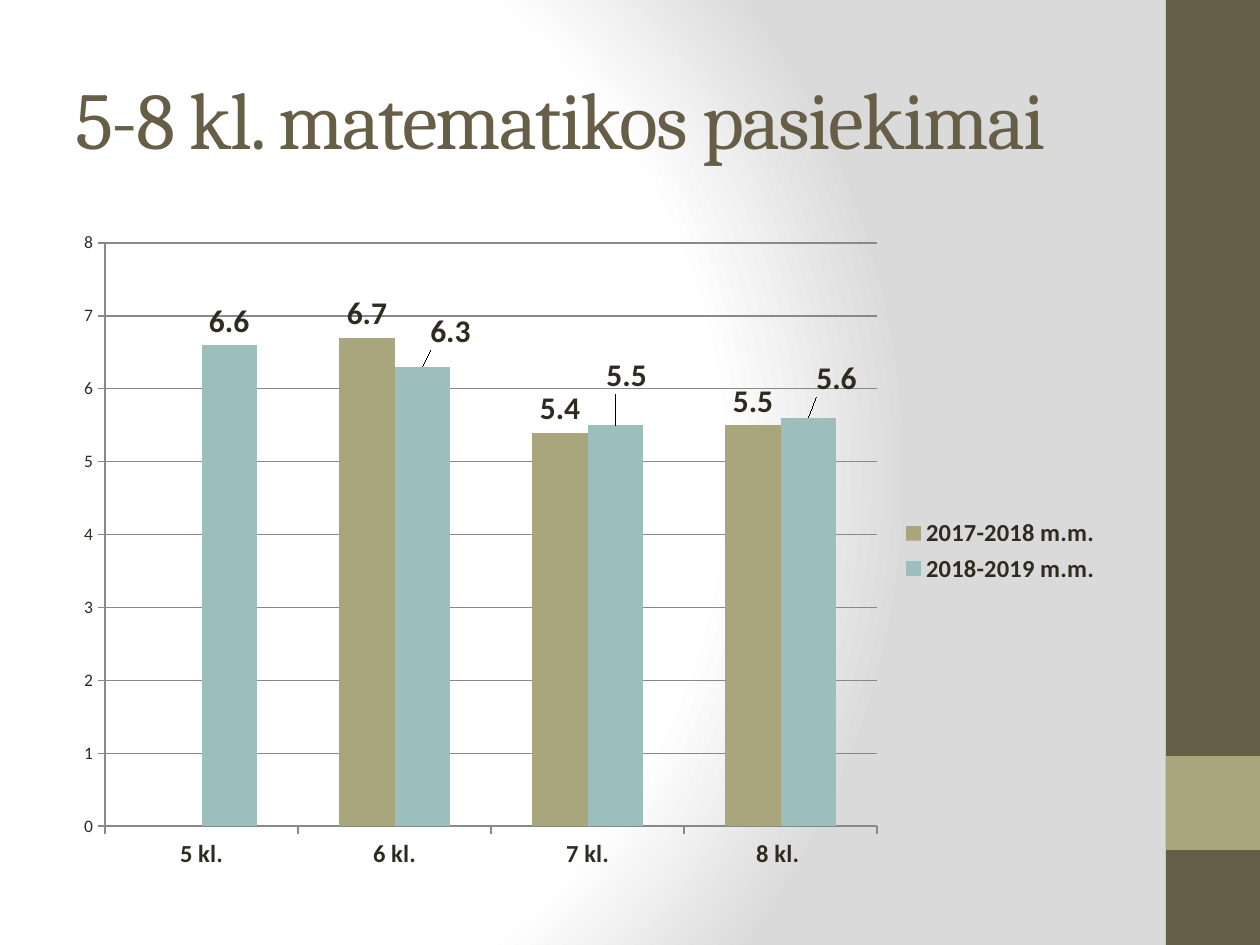
from lxml.etree import SubElement
from pptx import Presentation
from pptx.chart.data import CategoryChartData
from pptx.dml.color import RGBColor
from pptx.enum.chart import (XL_CHART_TYPE, XL_LABEL_POSITION,
                             XL_LEGEND_POSITION, XL_TICK_MARK)
from pptx.enum.shapes import MSO_SHAPE
from pptx.enum.text import MSO_ANCHOR
from pptx.oxml import parse_xml
from pptx.oxml.ns import nsdecls, qn
from pptx.util import Pt

SCALE = 914400 / 126
DARK, OLIVE, TEAL, INK, GREY = "675E47", "A9A57C", "9CBEBD", "2F2B20", "898989"
CATS = ["5 kl.", "6 kl.", "7 kl.", "8 kl. "]
SERIES = [
    ("2017-2018 m.m.", OLIVE, [None, 6.7, 5.4, 5.5], {}),
    ("2018-2019 m.m.", TEAL, [6.6, 6.3, 5.5, 5.6],
     {1: (28, -11), 2: (12, -26), 3: (28, -16)}),
]


def px(num):
    return round(num * SCALE)


def rgb(code):
    return RGBColor.from_string(code)


def style(font, size, bold=False, name="Calibri", color=INK):
    font.size, font.bold, font.name = Pt(size), bold, name
    font.color.rgb = rgb(color)


def backdrop(slide):
    stops = "".join(
        f'<a:gs pos="{pos * 1000}"><a:srgbClr val="{code}"/></a:gs>'
        for pos, code in [(0, "FFFFFF"), (75, "FFFFFF"), (100, "DADADA")])
    fill = parse_xml(
        f'<a:gradFill {nsdecls("a")} rotWithShape="1"><a:gsLst>{stops}</a:gsLst>'
        '<a:path path="circle"><a:fillToRect l="20000" t="50000" r="100000"'
        ' b="50000"/></a:path></a:gradFill>')
    slide.background.fill.solid()
    props = slide.background._cSld.bg.bgPr
    props.replace(props[0], fill)


def block(slide, left, top, width, height, color):
    shape = slide.shapes.add_shape(
        MSO_SHAPE.RECTANGLE, px(left), px(top), px(width), px(height))
    shape.shadow.inherit = False
    shape.fill.solid()
    shape.fill.fore_color.rgb = rgb(color)
    shape.line.fill.background()


def sidebar(slide, left, top, width, height):
    block(slide, left, top, width, height, DARK)
    block(slide, left, top + height * 4 // 5, width, width, OLIVE)


def title(slide, left, top, width, height, text):
    box = slide.shapes.add_textbox(px(left), px(top), px(width), px(height))
    frame = box.text_frame
    frame.word_wrap = True
    frame.vertical_anchor = MSO_ANCHOR.MIDDLE
    para = frame.paragraphs[0]
    run = para.add_run()
    run.text = text
    style(para.font, 46, name="Cambria", color=DARK)
    run.font._element.set("spc", "-100")


def shift(label, across, down):
    layout = label.makeelement(qn("c:layout"))
    manual = SubElement(layout, qn("c:manualLayout"))
    for axis, part in (("x", across), ("y", down)):
        SubElement(manual, qn(f"c:{axis}")).set("val", f"{part:.3f}")
    label.insert(1, layout)


def bars(slide, left, top, width, height):
    data = CategoryChartData(number_format="General")
    data.categories = CATS
    for name, _, vals, _ in SERIES:
        data.add_series(name, vals)
    chart = slide.shapes.add_chart(
        XL_CHART_TYPE.COLUMN_CLUSTERED, px(left), px(top), px(width),
        px(height), data).chart
    style(chart.font, 10)
    chart.has_title = False
    chart.has_legend = True
    chart.legend.position = XL_LEGEND_POSITION.RIGHT
    chart.legend.include_in_layout = False
    style(chart.legend.font, 14, True)

    plot = chart.plots[0]
    plot.gap_width, plot.overlap, plot.vary_by_categories = 150, 0, False
    for series, (_, color, _, moves) in zip(plot.series, SERIES):
        series.format.fill.solid()
        series.format.fill.fore_color.rgb = rgb(color)
        series.invert_if_negative = False
        labels = series.data_labels
        labels.show_value = True
        labels.position = XL_LABEL_POSITION.OUTSIDE_END
        style(labels.font, 18, True)
        for index, (across, down) in moves.items():
            label = series.points[index].data_label
            style(label.font, 18, True)
            label.position = XL_LABEL_POSITION.OUTSIDE_END
            found = series._element.xpath(
                f"c:dLbls/c:dLbl[c:idx/@val='{index}']")[0]
            shift(found, across / width, down / height)

    cat, val = chart.category_axis, chart.value_axis
    val.minimum_scale, val.maximum_scale, val.major_unit = 0, 8, 1
    val.has_major_gridlines = True
    style(cat.tick_labels.font, 14, True)
    style(val.tick_labels.font, 10)
    for axis in (cat, val):
        axis.major_tick_mark = XL_TICK_MARK.OUTSIDE
    for part in (cat, val, val.major_gridlines):
        part.format.line.color.rgb = rgb(GREY)
        part.format.line.width = Pt(0.75)


def main():
    deck = Presentation()
    deck.slide_width, deck.slide_height = px(1260), px(945)
    slide = deck.slides.add_slide(deck.slide_layouts[6])
    backdrop(slide)
    sidebar(slide, 1166, 0, 94, 945)
    title(slide, 63, 38, 1050, 158, "5-8 kl. matematikos pasiekimai")
    bars(slide, 63, 220, 1050, 662)
    deck.save("out.pptx")


if __name__ == "__main__":
    main()
